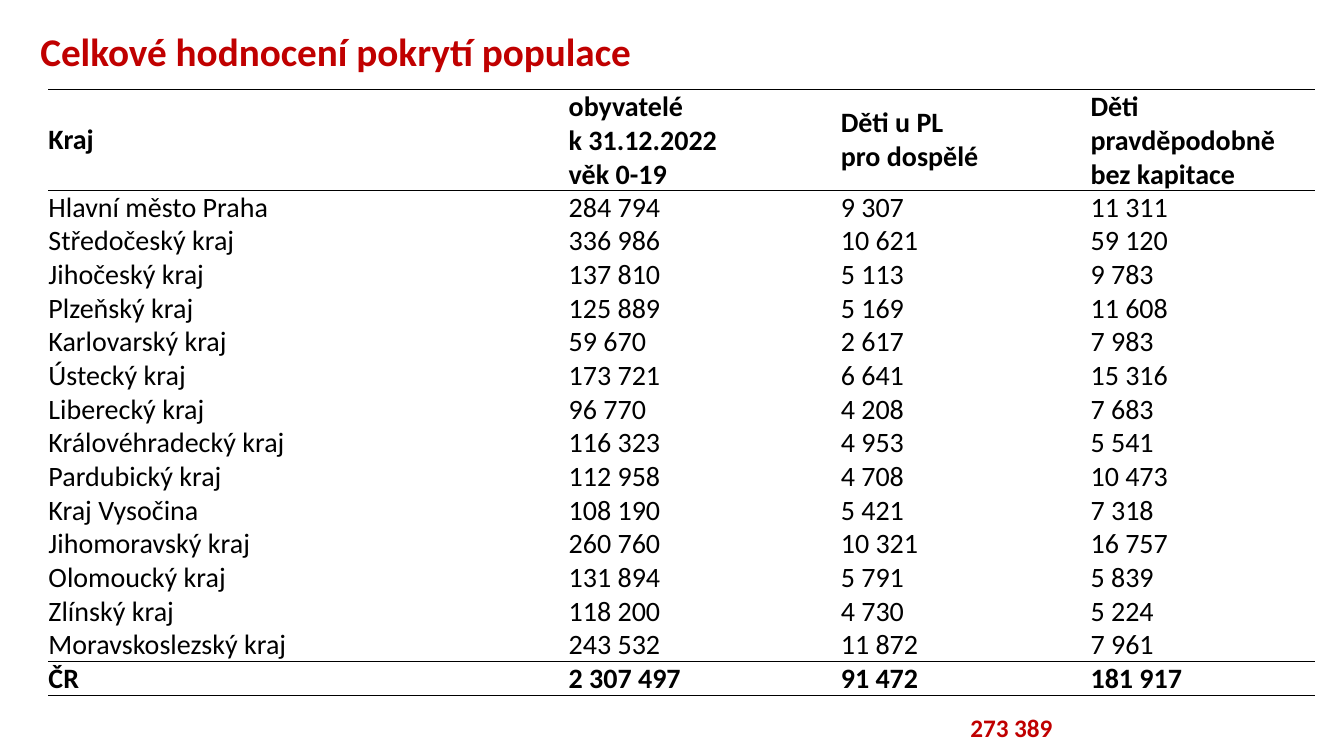
"""Build a slide with a table of child population coverage by Czech region."""
import pptx
import pptx.dml.color
import pptx.enum.text
import pptx.oxml
import pptx.oxml.ns
import pptx.util

Pt = pptx.util.Pt
RED = "C00000"
BLACK = "000000"


def style_font(paragraph, size, color, bold):
    paragraph.font.name = "Calibri"
    paragraph.font.size = Pt(size)
    paragraph.font.bold = bold
    paragraph.font.color.rgb = pptx.dml.color.RGBColor.from_string(color)


def add_rules(cell):
    properties = cell._tc.get_or_add_tcPr()
    for position, side in enumerate(("lnT", "lnB")):
        line = pptx.oxml.parse_xml(
            f'<a:{side} {pptx.oxml.ns.nsdecls("a")} w="{Pt(1)}">'
            f'<a:solidFill><a:srgbClr val="{BLACK}"/></a:solidFill></a:{side}>'
        )
        properties.insert(position, line)


rows = [
    ("Kraj", "obyvatelé\nk 31.12.2022 \vvěk 0-19", "Děti u PL\npro dospělé",
     "Děti pravděpodobně\nbez kapitace"),
    ("Hlavní město Praha", "284 794", "9 307", "11 311"),
    ("Středočeský kraj", "336 986", "10 621", "59 120"),
    ("Jihočeský kraj", "137 810", "5 113", "9 783"),
    ("Plzeňský kraj", "125 889", "5 169", "11 608"),
    ("Karlovarský kraj", "59 670", "2 617", "7 983"),
    ("Ústecký kraj", "173 721", "6 641", "15 316"),
    ("Liberecký kraj", "96 770", "4 208", "7 683"),
    ("Královéhradecký kraj", "116 323", "4 953", "5 541"),
    ("Pardubický kraj", "112 958", "4 708", "10 473"),
    ("Kraj Vysočina", "108 190", "5 421", "7 318"),
    ("Jihomoravský kraj", "260 760", "10 321", "16 757"),
    ("Olomoucký kraj", "131 894", "5 791", "5 839"),
    ("Zlínský kraj", "118 200", "4 730", "5 224"),
    ("Moravskoslezský kraj", "243 532", "11 872", "7 961"),
    ("ČR", "2 307 497", "91 472", "181 917"),
]
column_widths = (371.6, 194.4, 178.4, 160)
header_height, row_height = 66, 22.4

presentation = pptx.Presentation()
presentation.slide_width = Pt(960)
presentation.slide_height = Pt(540)
slide = presentation.slides.add_slide(presentation.slide_layouts[5])

title = slide.shapes.title
title.left, title.top, title.width, title.height = Pt(21.6), Pt(16), Pt(828), Pt(41)
title.text_frame.text = "Celkové hodnocení pokrytí populace"
title.text_frame.vertical_anchor = pptx.enum.text.MSO_ANCHOR.TOP
title.text_frame.auto_size = pptx.enum.text.MSO_AUTO_SIZE.SHAPE_TO_FIT_TEXT
title.text_frame.paragraphs[0].alignment = pptx.enum.text.PP_ALIGN.LEFT
style_font(title.text_frame.paragraphs[0], 28, RED, True)

table = slide.shapes.add_table(
    len(rows), len(column_widths), Pt(34.6), Pt(64), Pt(sum(column_widths)),
    Pt(header_height + row_height * (len(rows) - 1)),
).table
table.first_row = False
table.horz_banding = False
style_id = table._tbl.tblPr.find(pptx.oxml.ns.qn("a:tableStyleId"))
style_id.text = "{2D5ABB26-0587-4C30-8999-92F81FD0307C}"
for column, width in zip(table.columns, column_widths):
    column.width = Pt(width)

for row_index, values in enumerate(rows):
    emphasized = row_index in (0, len(rows) - 1)
    table.rows[row_index].height = Pt(row_height if row_index else header_height)
    for column_index, value in enumerate(values):
        cell = table.cell(row_index, column_index)
        cell.text = value
        cell.fill.background()
        cell.vertical_anchor = pptx.enum.text.MSO_ANCHOR.MIDDLE
        cell.margin_left = cell.margin_right = cell.margin_top = cell.margin_bottom = 0
        for paragraph in cell.text_frame.paragraphs:
            style_font(paragraph, 20, BLACK, emphasized)
        if emphasized:
            add_rules(cell)

total = slide.shapes.add_textbox(Pt(654.5), Pt(505.4), Pt(136), Pt(29))
total.text_frame.word_wrap = True
total.text_frame.auto_size = pptx.enum.text.MSO_AUTO_SIZE.SHAPE_TO_FIT_TEXT
total.text_frame.text = "273 389"
total.text_frame.paragraphs[0].alignment = pptx.enum.text.PP_ALIGN.CENTER
style_font(total.text_frame.paragraphs[0], 18, RED, True)

presentation.save("out.pptx")
